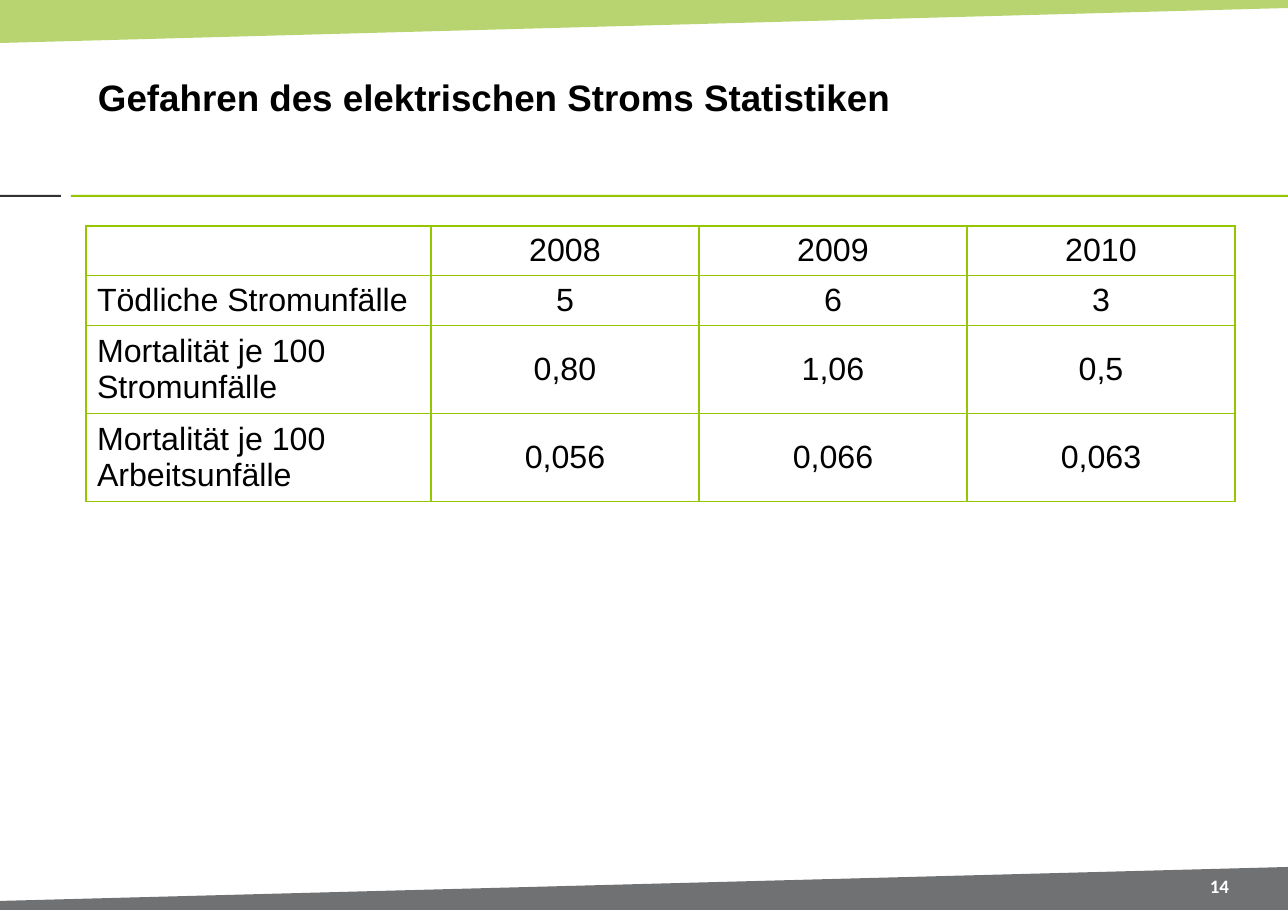
from dataclasses import dataclass

from lxml.etree import SubElement
from pptx import Presentation
from pptx.dml.color import RGBColor
from pptx.enum.shapes import MSO_SHAPE
from pptx.enum.text import MSO_ANCHOR, PP_ALIGN
from pptx.oxml import parse_xml
from pptx.oxml.ns import nsdecls, qn
from pptx.util import Pt

TITLE = "Gefahren des elektrischen Stroms Statistiken"
PAGE_NUMBER = "14"
STATISTICS = [
    ("", "2008", "2009", "2010"),
    ("Tödliche Stromunfälle", "5", "6", "3"),
    ("Mortalität je 100 Stromunfälle", "0,80", "1,06", "0,5"),
    ("Mortalität je 100 Arbeitsunfälle", "0,056", "0,066", "0,063"),
]


@dataclass(frozen=True)
class Theme:
    green: str = "94C600"
    band_green: str = "95C02A"
    dark: str = "313130"
    gray: str = "707173"
    black: str = "000000"
    white: str = "FFFFFF"
    font: str = "Arial"
    number_font: str = "Calibri"
    title_size: float = 24
    table_size: float = 21
    number_size: float = 12.4


THEME = Theme()
PX = 8298  # EMU per pixel
WIDTH, HEIGHT = 1288, 911
LEFT, CONTENT_WIDTH = 86, 1149
LABEL_WIDTH, YEAR_WIDTH = 345, 268
ROW_HEIGHTS = [47, 47, 83, 83]
RULE_TOP, RULE_HEIGHT = 195, 2


def paint(shape, color):
    shape.shadow.inherit = False
    shape.fill.solid()
    shape.fill.fore_color.rgb = RGBColor.from_string(color)
    shape.line.fill.background()


def add_band(page, corners, color):
    builder = page.shapes.build_freeform(*corners[0], scale=PX)
    builder.add_line_segments(corners[1:], close=True)
    band = builder.convert_to_shape()
    paint(band, color)
    return band


def add_rule(page, left, width, color):
    rule = page.shapes.add_shape(
        MSO_SHAPE.RECTANGLE, left * PX, RULE_TOP * PX, width * PX, RULE_HEIGHT * PX)
    paint(rule, color)


def write(frame, text, font, size, color, bold=False, align=PP_ALIGN.LEFT):
    frame.text = text
    para = frame.paragraphs[0]
    para.alignment = align
    for span in para.runs:
        span.font.name = font
        span.font.size = Pt(size)
        span.font.bold = bold
        span.font.color.rgb = RGBColor.from_string(color)


def add_text(page, left, top, width, height, *style, **options):
    box = page.shapes.add_textbox(left * PX, top * PX, width * PX, height * PX)
    frame = box.text_frame
    frame.word_wrap = True
    frame.vertical_anchor = MSO_ANCHOR.MIDDLE
    frame.margin_left = frame.margin_right = 12 * PX
    frame.margin_top = frame.margin_bottom = 6 * PX
    write(frame, *style, **options)


def outline(cell, color):
    properties = cell._tc.get_or_add_tcPr()
    for position, side in enumerate(("lnL", "lnR", "lnT", "lnB")):
        properties.insert(position, parse_xml(
            f'<a:{side} {nsdecls("a")} w="{Pt(1)}"><a:solidFill>'
            f'<a:srgbClr val="{color}"/></a:solidFill></a:{side}>'))


def add_statistics(page, top):
    frame = page.shapes.add_table(
        len(STATISTICS), len(STATISTICS[0]),
        LEFT * PX, top * PX, CONTENT_WIDTH * PX, sum(ROW_HEIGHTS) * PX)
    table = frame.table
    table.first_row = table.horz_banding = False
    for index, column in enumerate(table.columns):
        column.width = (YEAR_WIDTH if index else LABEL_WIDTH) * PX
    for row, height, values in zip(table.rows, ROW_HEIGHTS, STATISTICS):
        row.height = height * PX
        for index, (cell, value) in enumerate(zip(row.cells, values)):
            cell.fill.background()
            cell.vertical_anchor = MSO_ANCHOR.MIDDLE
            write(cell.text_frame, value, THEME.font, THEME.table_size, THEME.black,
                  align=PP_ALIGN.CENTER if index else PP_ALIGN.LEFT)
            outline(cell, THEME.green)


def main():
    deck = Presentation()
    deck.slide_width, deck.slide_height = WIDTH * PX, HEIGHT * PX
    page = deck.slides.add_slide(deck.slide_layouts[6])

    top_band = add_band(
        page, [(0, 0), (WIDTH, 0), (WIDTH, 8), (0, 43)], THEME.band_green)
    color = top_band.fill._xPr.find(qn("a:solidFill"))[0]
    SubElement(color, qn("a:alpha"), val="67000")
    add_band(page, [(0, 910), (0, 901), (WIDTH, 867), (WIDTH, 910)], THEME.gray)
    add_rule(page, 0, 61, THEME.dark)
    add_rule(page, 71, WIDTH - 71, THEME.green)

    add_text(page, LEFT, 31, CONTENT_WIDTH, 131,
             TITLE, THEME.font, THEME.title_size, THEME.black, bold=True)
    add_text(page, 1182, 870, 75, 32, PAGE_NUMBER, THEME.number_font,
             THEME.number_size, THEME.white, bold=True, align=PP_ALIGN.CENTER)
    add_statistics(page, 226)
    deck.save("out.pptx")


if __name__ == "__main__":
    main()
